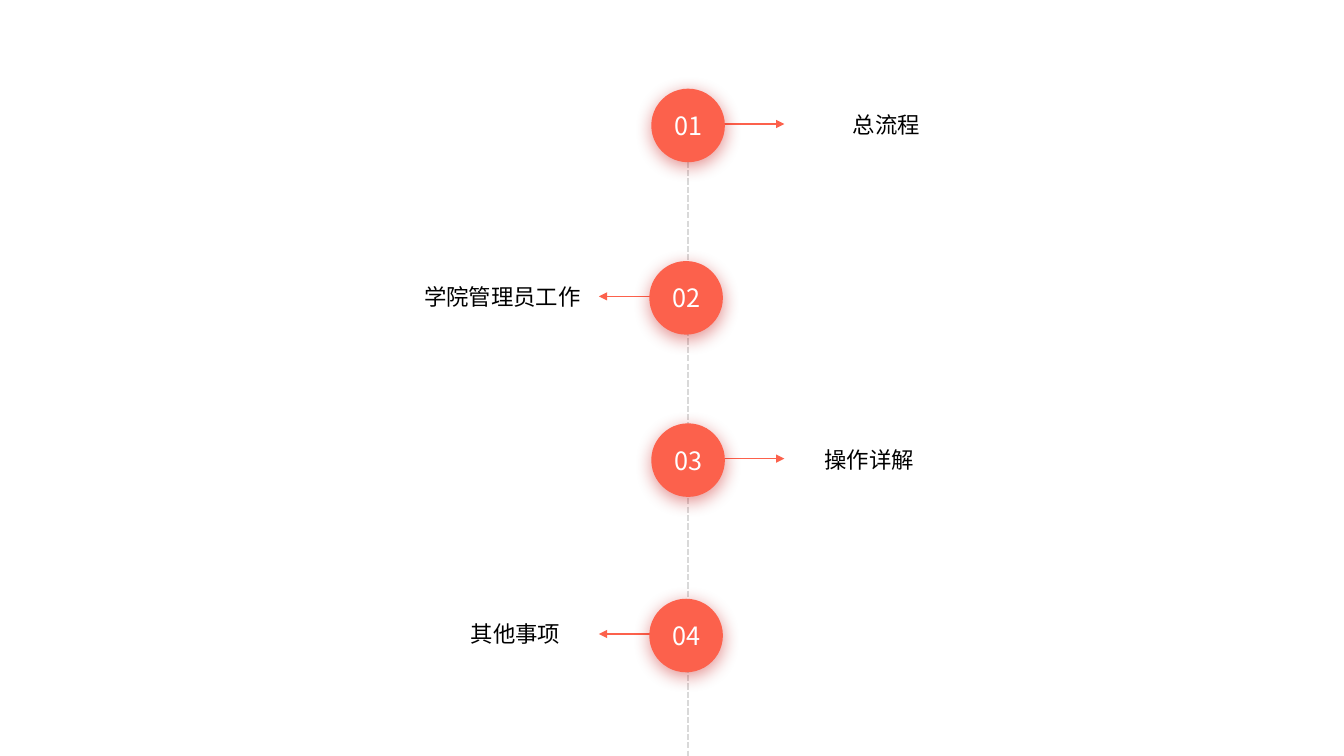
from lxml.etree import SubElement
from pptx import Presentation
from pptx.dml.color import RGBColor
from pptx.enum.dml import MSO_LINE
from pptx.enum.shapes import MSO_CONNECTOR, MSO_SHAPE
from pptx.enum.text import MSO_ANCHOR, PP_ALIGN
from pptx.oxml.ns import qn
from pptx.util import Inches, Pt

STEPS = [
    {"number": "01", "label": "总流程", "top": 0.88, "side": "right", "box": (7.86, 1.05, 1.7)},
    {"number": "02", "label": "学院管理员工作", "top": 2.59, "side": "left", "box": (3.61, 2.76, 2.26)},
    {"number": "03", "label": "操作详解", "top": 4.2, "side": "right", "box": (7.58, 4.38, 2.26)},
    {"number": "04", "label": "其他事项", "top": 5.94, "side": "left", "box": (4.07, 6.1, 1.81)},
]
SIDES = {
    "right": {"circle_left": 6.46, "arrow": (7, 7.78)},
    "left": {"circle_left": 6.44, "arrow": (6.67, 5.94)},
}
SLIDE_WIDTH, SLIDE_HEIGHT = 13.33, 7.5
DIAMETER = 0.73
ARROW_DROP = 0.35
LABEL_HEIGHT = 0.37
AXIS_X, AXIS_TOP = 6.82, 1.27
FONT = "Noto Sans CJK SC"
CORAL = RGBColor(0xFC, 0x61, 0x4C)
GREY = RGBColor(0xD9, 0xD9, 0xD9)
WHITE = RGBColor(0xFF, 0xFF, 0xFF)
BLACK = RGBColor(0, 0, 0)
SHADOW = RGBColor(0xC0, 0, 0)


def write_text(shape, text, size, color, align=PP_ALIGN.LEFT, level=0, indent=0):
    paragraph = shape.text_frame.paragraphs[0]
    paragraph.alignment = align
    paragraph.level = level
    properties = paragraph._p.get_or_add_pPr()
    properties.set("marL", str(Inches(indent)))
    properties.set("indent", "0")
    run = paragraph.add_run()
    run.text = text
    run.font.size = Pt(size)
    run.font.name = FONT
    run.font.color.rgb = color
    SubElement(run._r.get_or_add_rPr(), qn("a:ea"), typeface=FONT)


def add_line(slide, start, end, color, width):
    connector = slide.shapes.add_connector(
        MSO_CONNECTOR.STRAIGHT, *[Inches(value) for value in (*start, *end)])
    connector.line.color.rgb = color
    connector.line.width = Pt(width)
    SubElement(connector._element.spPr, qn("a:effectLst"))
    return connector


def add_arrow(slide, step):
    start, end = SIDES[step["side"]]["arrow"]
    y = step["top"] + ARROW_DROP
    arrow = add_line(slide, (start, y), (end, y), CORAL, 1)
    SubElement(arrow.line._get_or_add_ln(), qn("a:tailEnd"), type="triangle")


def add_circle(slide, step):
    left = SIDES[step["side"]]["circle_left"]
    circle = slide.shapes.add_shape(
        MSO_SHAPE.OVAL, Inches(left), Inches(step["top"]), Inches(DIAMETER), Inches(DIAMETER))
    circle.fill.solid()
    circle.fill.fore_color.rgb = CORAL
    circle.line.fill.background()
    circle.shadow.inherit = False
    effects = circle._element.spPr.find(qn("a:effectLst"))
    shadow = SubElement(effects, qn("a:outerShdw"), blurRad=str(Pt(13)), dist=str(Pt(3)),
                        dir="5400000", algn="t", rotWithShape="0")
    color = SubElement(shadow, qn("a:srgbClr"), val=str(SHADOW))
    SubElement(color, qn("a:alpha"), val="43000")
    frame = circle.text_frame
    frame.margin_left = frame.margin_right = 0
    frame.vertical_anchor = MSO_ANCHOR.MIDDLE
    write_text(circle, step["number"], size=18, color=WHITE, align=PP_ALIGN.CENTER)


def add_label(slide, step):
    left, top, width = step["box"]
    label = slide.shapes.add_textbox(
        Inches(left), Inches(top), Inches(width), Inches(LABEL_HEIGHT))
    label.text_frame.word_wrap = True
    label.text_frame.margin_right = 0
    write_text(label, step["label"], size=16, color=BLACK, level=1, indent=0.5)


def main():
    presentation = Presentation()
    presentation.slide_width = Inches(SLIDE_WIDTH)
    presentation.slide_height = Inches(SLIDE_HEIGHT)
    slide = presentation.slides.add_slide(presentation.slide_layouts[6])
    axis = add_line(slide, (AXIS_X, AXIS_TOP), (AXIS_X, SLIDE_HEIGHT), GREY, 1.5)
    axis.line.dash_style = MSO_LINE.SQUARE_DOT
    for step in STEPS:
        add_arrow(slide, step)
        add_circle(slide, step)
        add_label(slide, step)
    presentation.save("out.pptx")


if __name__ == "__main__":
    main()
